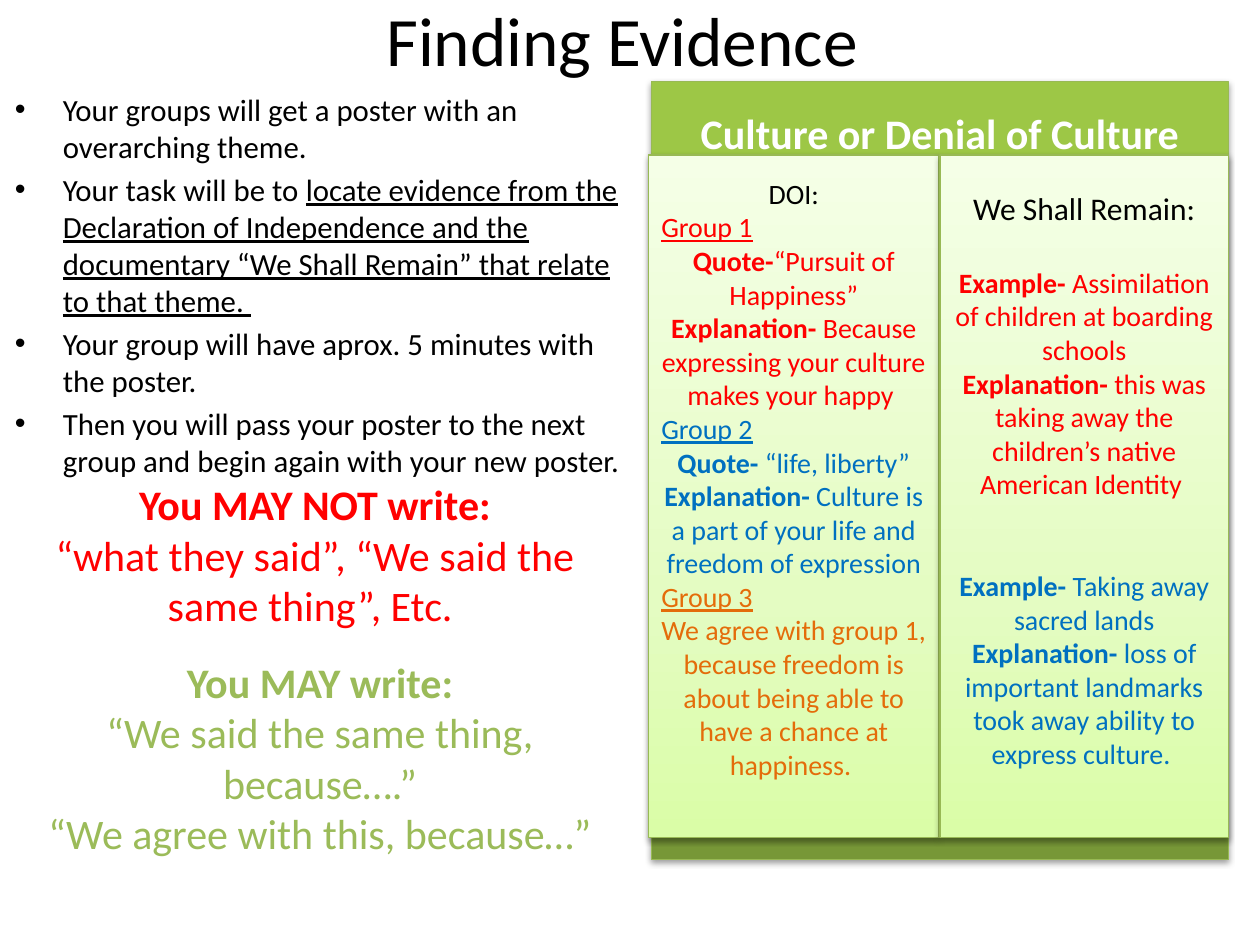
from typing import NamedTuple

import pptx
import pptx.dml.color
import pptx.enum.shapes
import pptx.enum.text
import pptx.oxml
import pptx.oxml.ns
import pptx.util
from pptx.util import Inches

RGBColor = pptx.dml.color.RGBColor
Align = pptx.enum.text.PP_ALIGN
Anchor = pptx.enum.text.MSO_ANCHOR

BLACK = RGBColor(0x00, 0x00, 0x00)
WHITE = RGBColor(0xFF, 0xFF, 0xFF)
RED = RGBColor(0xFF, 0x00, 0x00)
BLUE = RGBColor(0x00, 0x70, 0xC0)
ORANGE = RGBColor(0xE4, 0x6C, 0x0A)
GREEN = RGBColor(0x9B, 0xBB, 0x59)
EDGE = RGBColor(0x98, 0xB9, 0x55)
DARK = [(0, RGBColor(0x77, 0x97, 0x37)), (80, RGBColor(0x9B, 0xC3, 0x48)),
        (100, RGBColor(0x9D, 0xC7, 0x46))]
PALE = [(0, RGBColor(0xDA, 0xFD, 0xA7)), (35, RGBColor(0xE4, 0xFC, 0xC2)),
        (100, RGBColor(0xF5, 0xFF, 0xE7))]


class Run(NamedTuple):
    text: str
    bold: bool = False
    line: bool = False


class Para(NamedTuple):
    runs: list[Run]
    size: float
    color: RGBColor = BLACK
    align: Align = Align.CENTER
    before: float = 0
    bullet: bool = False


class Box(NamedTuple):
    left: float
    top: float
    width: float
    height: float


class Panel(NamedTuple):
    box: Box
    stops: list[tuple[int, RGBColor]]
    inset: float
    paras: list[Para]


def group(num: int, color: RGBColor) -> Para:
    return Para([Run(f"Group {num}", line=True)], 16, color, Align.LEFT)


def point(label: str, text: str, color: RGBColor, before: float = 0) -> Para:
    """Bold label followed by plain text."""
    return Para([Run(label + "-", bold=True), Run(text)], 16, color, before=before)


def item(*runs: Run, before: float = 3.5) -> Para:
    return Para(list(runs), 17.6, align=Align.LEFT, before=before, bullet=True)


def note(head: str, color: RGBColor, *lines: str) -> list[Para]:
    return [Para([Run(head, bold=True)], 24, color)] + [
        Para([Run(line)], 24, color) for line in lines]


def node(xml: str):
    return pptx.oxml.parse_xml(xml.replace(">", f" {pptx.oxml.ns.nsdecls('a')}>", 1))


def write(frame, paras: list[Para]) -> None:
    frame.word_wrap = True
    for i, para in enumerate(paras):
        p = frame.paragraphs[0] if i == 0 else frame.add_paragraph()
        p.alignment = para.align
        if para.before:
            p.space_before = pptx.util.Pt(para.before)
        if para.bullet:
            props = p._p.get_or_add_pPr()
            props.set("marL", str(Inches(0.38)))
            props.set("indent", str(Inches(-0.38)))
            props.append(node('<a:buFont typeface="Arial"></a:buFont>'))
            props.append(node('<a:buChar char="•"></a:buChar>'))
        for part in para.runs:
            run = p.add_run()
            run.text = part.text
            font = run.font
            font.name = "Calibri"
            font.size = pptx.util.Pt(para.size)
            font.bold = part.bold
            font.underline = part.line
            font.color.rgb = para.color


def place(box: Box) -> list[int]:
    return [Inches(n) for n in box]


def add_text(slide, box: Box, paras: list[Para], anchor: Anchor = Anchor.TOP) -> None:
    frame = slide.shapes.add_textbox(*place(box)).text_frame
    frame.vertical_anchor = anchor
    write(frame, paras)


def add_panel(slide, panel: Panel) -> None:
    """Rectangle with an upward gradient and a soft shadow below."""
    kind = pptx.enum.shapes.MSO_SHAPE.RECTANGLE
    shape = slide.shapes.add_shape(kind, *place(panel.box))
    shape.shadow.inherit = False
    shape.line.color.rgb = EDGE
    shape.line.width = pptx.util.Pt(0.75)
    stops = "".join(f'<a:gs pos="{pos * 1000}"><a:srgbClr val="{color}"/></a:gs>'
                    for pos, color in panel.stops)
    props = shape._element.spPr
    props.find(pptx.oxml.ns.qn("a:prstGeom")).addnext(node(
        f'<a:gradFill><a:gsLst>{stops}</a:gsLst>'
        '<a:lin ang="16200000" scaled="0"/></a:gradFill>'))
    props.find(pptx.oxml.ns.qn("a:effectLst")).append(node(
        '<a:outerShdw blurRad="40000" dist="20000" dir="5400000" rotWithShape="0">'
        '<a:srgbClr val="000000"><a:alpha val="38000"/></a:srgbClr></a:outerShdw>'))
    frame = shape.text_frame
    frame.vertical_anchor = Anchor.TOP
    frame.margin_top = Inches(panel.inset)
    write(frame, panel.paras)


TASKS = [
    item(Run("Your groups will get a poster with an overarching theme."), before=0),
    item(Run("Your task will be to "),
         Run("locate evidence from the Declaration of Independence and the "
             "documentary “We Shall Remain” that relate to that theme. ", line=True)),
    item(Run("Your group will have aprox. 5 minutes with the poster.")),
    item(Run("Then you will pass your poster to the next group and begin again "
             "with your new poster.")),
]
THEME = [Para([Run("Culture or Denial of Culture", bold=True)], 24, WHITE)]
QUOTES = [
    Para([Run("DOI:")], 16),
    group(1, RED),
    point("Quote", "“Pursuit of Happiness”", RED),
    point("Explanation", " Because expressing your culture makes your happy ", RED),
    group(2, BLUE),
    point("Quote", " “life, liberty”", BLUE),
    point("Explanation", " Culture is a part of your life and freedom of expression", BLUE),
    group(3, ORANGE),
    Para([Run("We agree with group 1, because freedom is about being able to have "
              "a chance at happiness. ")], 16, ORANGE),
]
FILM = [
    Para([Run("We Shall Remain:")], 18),
    point("Example", " Assimilation of children at boarding schools", RED, before=22),
    point("Explanation",
          " this was taking away the children’s native American Identity ", RED),
    point("Example", " Taking away sacred lands", BLUE, before=39),
    point("Explanation",
          " loss of important landmarks took away ability to express culture. ", BLUE),
]
PANELS = [
    Panel(Box(5.17, 0.65, 4.58, 6.17), DARK, 0.2, THEME),
    Panel(Box(5.15, 1.23, 2.3, 5.42), PALE, 0.17, QUOTES),
    Panel(Box(7.46, 1.23, 2.29, 5.42), PALE, 0.27, FILM),
]


def main() -> None:
    deck = pptx.Presentation()
    deck.slide_width, deck.slide_height = Inches(10), Inches(7.5)
    slide = deck.slides.add_slide(deck.slide_layouts[6])
    add_text(slide, Box(0.5, 0, 9, 0.62),
             [Para([Run("Finding Evidence ")], 39.6)], Anchor.MIDDLE)
    add_text(slide, Box(0.02, 0.67, 5.08, 3.17), TASKS)
    for panel in PANELS:
        add_panel(slide, panel)
    add_text(slide, Box(0.25, 3.75, 4.5, 1.31),
             note("You MAY NOT write:", RED,
                  "“what they said”, “We said the same thing”, Etc. "))
    add_text(slide, Box(0.08, 5.16, 4.92, 1.72),
             note("You MAY write:", GREEN, "“We said the same thing, because….”",
                  "“We agree with this, because…”"))
    deck.save("out.pptx")


if __name__ == "__main__":
    main()
